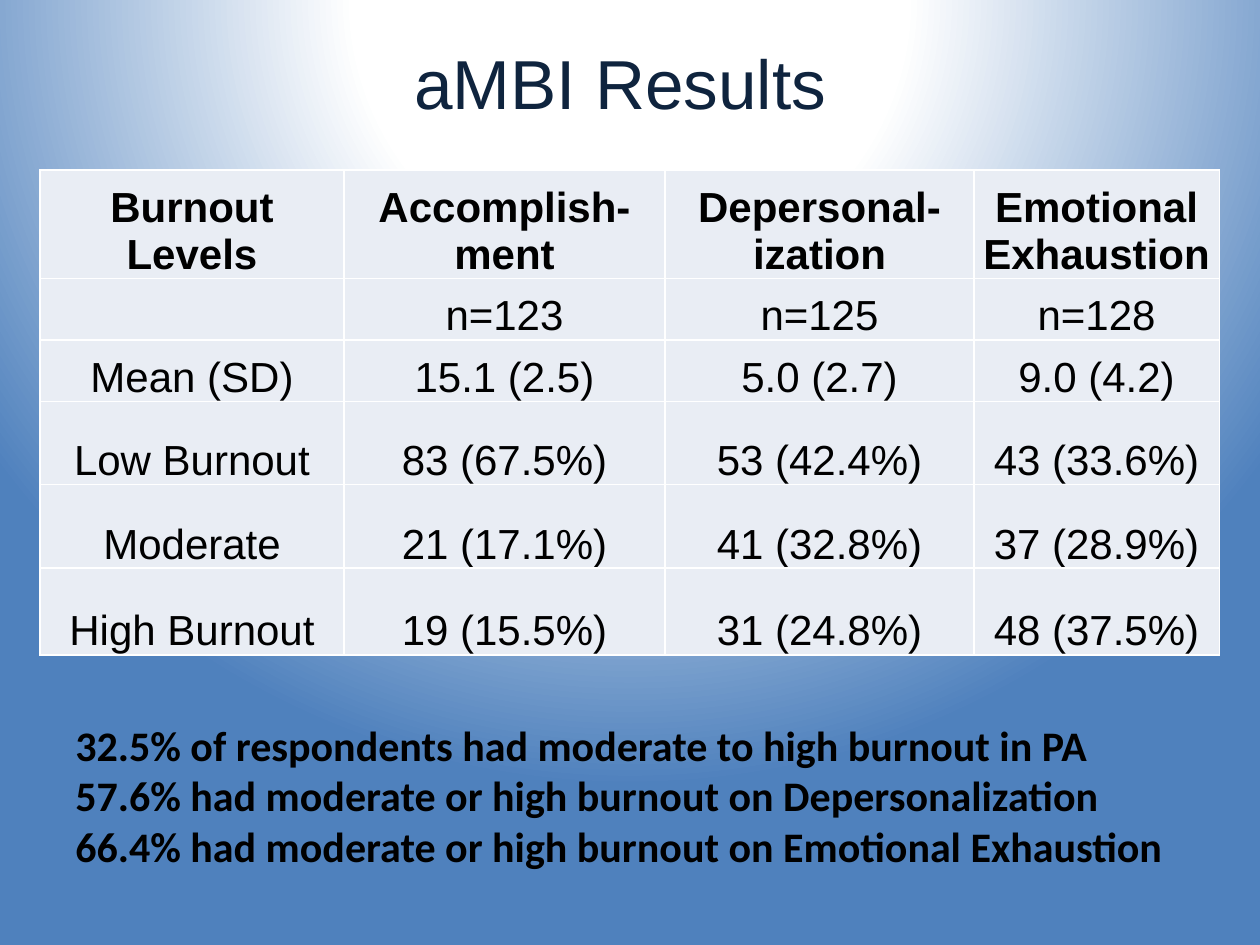
from lxml.etree import SubElement
from pptx import Presentation
from pptx.dml.color import RGBColor
from pptx.enum.text import MSO_ANCHOR, PP_ALIGN
from pptx.oxml import parse_xml
from pptx.oxml.ns import nsdecls, qn
from pptx.util import Cm, Pt

COLORS = {
    "title": "0F243E",
    "text": "000000",
    "cell": "E9EDF4",
    "white": "FFFFFF",
    "blue": "4F81BD",
}

HEADERS = ["Burnout Levels", "Accomplish-ment", "Depersonal-ization", "Emotional Exhaustion"]
ROWS = [
    HEADERS,
    ["", "n=123", "n=125", "n=128"],
    ["Mean (SD)", "15.1 (2.5)", "5.0 (2.7)", "9.0 (4.2)"],
    ["Low Burnout", "83 (67.5%)", "53 (42.4%)", "43 (33.6%)"],
    ["Moderate", "21 (17.1%)", "41 (32.8%)", "37 (28.9%)"],
    ["High Burnout", "19 (15.5%)", "31 (24.8%)", "48 (37.5%)"],
]
COL_WIDTHS = [6.12, 6.48, 6.22, 4.95]
ROW_HEIGHTS = [2.18, 1.24, 1.24, 1.68, 1.68, 1.75]

FINDINGS = [
    "32.5% of respondents had moderate to high burnout in PA",
    "57.6% had moderate or high burnout on Depersonalization",
    "66.4% had moderate or high burnout on Emotional Exhaustion",
]


class SlideBuilder:
    def __init__(self, s):
        self.s = s
        self.body_size = 24

    def style(self, p, font, size, color="text", bold=False, align=None):
        p.font.name = font
        p.font.size = Pt(size)
        p.font.bold = bold
        p.font.color.rgb = RGBColor.from_string(COLORS[color])
        p.alignment = align

    def background(self):
        stops = "".join(
            f'<a:gs pos="{pos * 1000}"><a:srgbClr val="{COLORS[name]}"/></a:gs>'
            for pos, name in [(0, "white"), (35, "white"), (100, "blue")]
        )
        bg = parse_xml(
            f'<p:bg {nsdecls("p", "a")}><p:bgPr><a:gradFill rotWithShape="1">'
            f'<a:gsLst>{stops}</a:gsLst><a:path path="circle">'
            '<a:fillToRect l="50000" t="-80000" r="50000" b="180000"/></a:path>'
            '</a:gradFill><a:effectLst/></p:bgPr></p:bg>'
        )
        self.s.element.cSld.insert(0, bg)

    def title(self, text, x, y, w, h):
        sp = self.s.shapes.title
        sp.left, sp.top, sp.width, sp.height = Cm(x), Cm(y), Cm(w), Cm(h)
        tf = sp.text_frame
        tf.text = text
        tf.vertical_anchor = MSO_ANCHOR.MIDDLE
        self.style(tf.paragraphs[0], "Arial", 39.6, "title", align=PP_ALIGN.CENTER)

    def borders(self, cell):
        tc_pr = cell._tc.get_or_add_tcPr()
        for side in ("lnL", "lnR", "lnT", "lnB"):
            ln = SubElement(tc_pr, qn(f"a:{side}"), w=str(Pt(1)))
            fill = SubElement(ln, qn("a:solidFill"))
            SubElement(fill, qn("a:srgbClr"), val=COLORS["white"])

    def table(self, rows, x, y, col_widths, row_heights):
        table = self.s.shapes.add_table(
            len(rows), len(col_widths), Cm(x), Cm(y),
            Cm(sum(col_widths)), Cm(sum(row_heights)),
        ).table
        table.first_row = table.horz_banding = False
        for col, width in zip(table.columns, col_widths):
            col.width = Cm(width)
        for i, (row, height) in enumerate(zip(rows, row_heights)):
            table.rows[i].height = Cm(height)
            for j, text in enumerate(row):
                self.cell(table.cell(i, j), text, bold=i == 0)

    def cell(self, cell, text, bold):
        self.borders(cell)
        cell.fill.solid()
        cell.fill.fore_color.rgb = RGBColor.from_string(COLORS["cell"])
        cell.margin_left = cell.margin_right = cell.margin_top = Cm(0.03)
        cell.margin_bottom = 0
        cell.vertical_anchor = MSO_ANCHOR.BOTTOM
        cell.text = text
        self.style(cell.text_frame.paragraphs[0], "Arial", self.body_size,
                   bold=bold, align=PP_ALIGN.CENTER)

    def text(self, lines, x, y, w, h):
        tf = self.s.shapes.add_textbox(Cm(x), Cm(y), Cm(w), Cm(h)).text_frame
        tf.word_wrap = True
        tf.text = "\n".join(lines)
        for p in tf.paragraphs:
            self.style(p, "Calibri", self.body_size, bold=True)


def main():
    prs = Presentation()
    prs.slide_width, prs.slide_height = Cm(25.4), Cm(19.05)
    builder = SlideBuilder(prs.slides.add_slide(prs.slide_layouts[5]))

    # Background and title
    builder.background()
    builder.title("aMBI Results ", 1.27, 0.76, 22.86, 1.78)

    # Burnout scores
    builder.table(ROWS, 0.81, 3.43, COL_WIDTHS, ROW_HEIGHTS)

    # Key findings
    builder.text(FINDINGS, 1.27, 14.38, 24.31, 3.33)

    prs.save("out.pptx")


if __name__ == "__main__":
    main()
